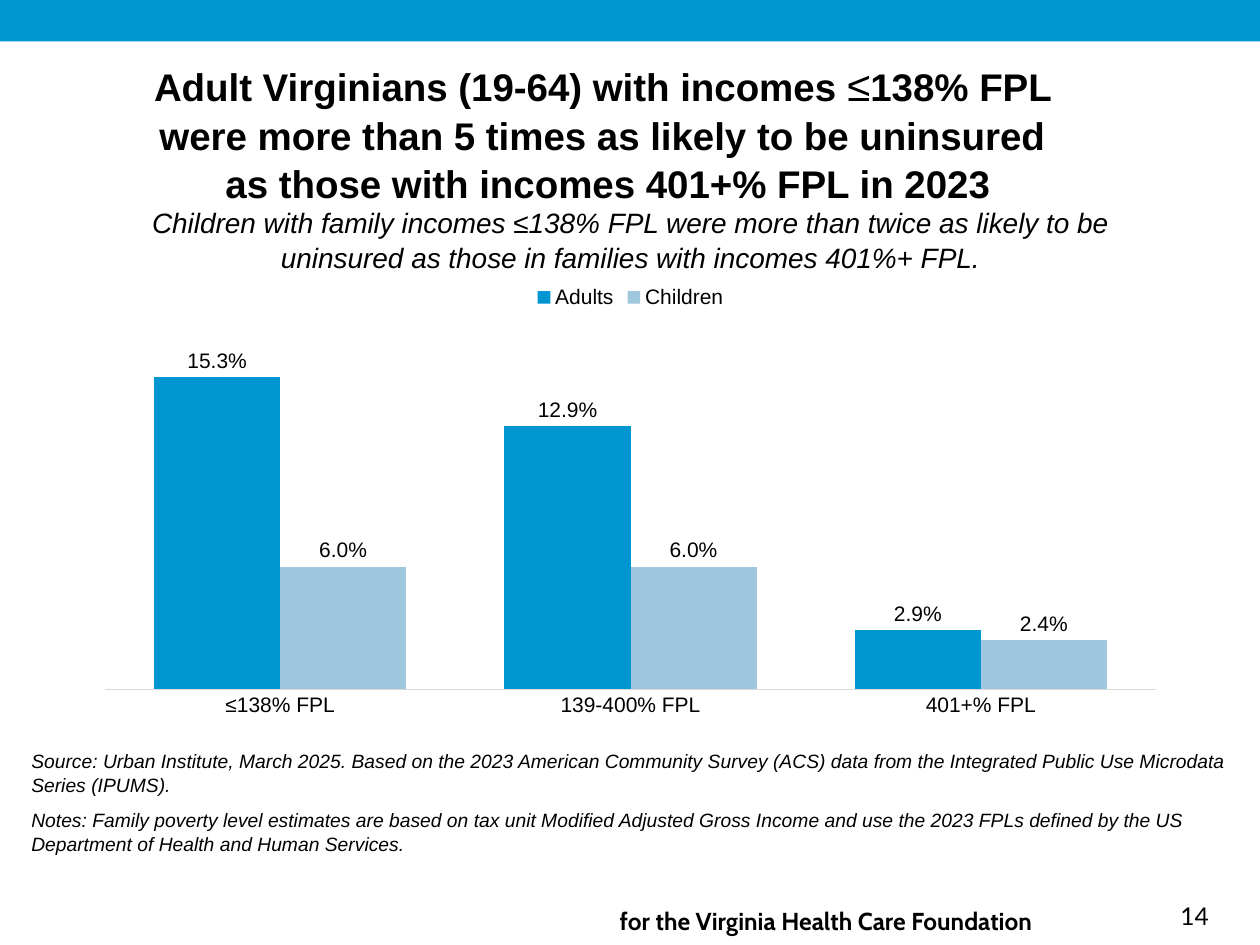
from dataclasses import dataclass

from lxml.etree import SubElement
from pptx import Presentation
from pptx.chart.data import CategoryChartData
from pptx.dml.color import RGBColor
from pptx.enum.chart import XL_CHART_TYPE, XL_LABEL_POSITION, XL_LEGEND_POSITION, XL_TICK_MARK
from pptx.enum.shapes import MSO_SHAPE
from pptx.enum.text import PP_ALIGN
from pptx.oxml.ns import qn
from pptx.util import Inches, Pt


@dataclass(frozen=True)
class Theme:
    black: RGBColor = RGBColor.from_string("000000")
    adults: RGBColor = RGBColor.from_string("0096D2")
    children: RGBColor = RGBColor.from_string("9FC7DE")
    axis: RGBColor = RGBColor.from_string("D9D9D9")
    body: str = "Arial"
    footer: str = "Cabin"
    number: str = "Lato"
    title_size: Pt = Pt(22)
    symbol_size: Pt = Pt(24)
    subtitle_size: Pt = Pt(16)
    footer_size: Pt = Pt(14)
    chart_size: Pt = Pt(12)
    note_size: Pt = Pt(11)


class SlideBuilder:
    """Holds the theme and the current slide, and adds each kind of element."""

    def __init__(self, slide, theme):
        self.slide = slide
        self.theme = theme

    def style_font(self, font, **formats):
        values = {"name": self.theme.body, **formats}
        for name, value in values.items():
            setattr(font, name, value)
        font.color.rgb = self.theme.black

    def add_band(self, left, top, width, height):
        shape = self.slide.shapes.add_shape(
            MSO_SHAPE.RECTANGLE, Inches(left), Inches(top), Inches(width), Inches(height)
        )
        shape.shadow.inherit = False
        shape.fill.solid()
        shape.fill.fore_color.rgb = self.theme.adults
        shape.line.fill.background()

    def add_text(self, box, paragraphs, font, **paragraph_formats):
        frame = self.slide.shapes.add_textbox(*map(Inches, box)).text_frame
        frame.word_wrap = True
        for index, runs in enumerate(paragraphs):
            paragraph = frame.paragraphs[0] if index == 0 else frame.add_paragraph()
            for name, value in paragraph_formats.items():
                setattr(paragraph, name, value)
            for position, (text, changes) in enumerate(runs):
                for line_index, line in enumerate(text.split("\n")):
                    if line_index:
                        paragraph.add_line_break()
                    run = paragraph.add_run()
                    run.text = line
                    self.style_font(run.font, **{**font, **changes})

    def add_column_chart(self, box, categories, series_data, plot_area):
        data = CategoryChartData(number_format="0.0%")
        data.categories = categories
        for name, values, color in series_data:
            data.add_series(name, values)
        chart = self.slide.shapes.add_chart(
            XL_CHART_TYPE.COLUMN_CLUSTERED, *map(Inches, box), data
        ).chart
        size = self.theme.chart_size
        self.style_font(chart.font, size=size)
        chart.has_title = False
        chart.has_legend = True
        chart.legend.position = XL_LEGEND_POSITION.TOP
        chart.legend.include_in_layout = False
        self.style_font(chart.legend.font, size=size)

        axis = chart.category_axis
        axis.major_tick_mark = XL_TICK_MARK.NONE
        axis.format.line.color.rgb = self.theme.axis
        axis.format.line.width = Pt(0.75)
        self.style_font(axis.tick_labels.font, size=size)
        value_formats = {
            "visible": False,
            "has_major_gridlines": False,
            "minimum_scale": 0,
            "maximum_scale": 0.18,
        }
        for name, value in value_formats.items():
            setattr(chart.value_axis, name, value)

        plot = chart.plots[0]
        plot.gap_width = 78
        plot.overlap = 0
        plot.vary_by_categories = False
        label_formats = {
            "show_value": True,
            "number_format": "0.0%",
            "number_format_is_linked": False,
            "position": XL_LABEL_POSITION.OUTSIDE_END,
        }
        for series, (_, _, color) in zip(plot.series, series_data):
            series.format.fill.solid()
            series.format.fill.fore_color.rgb = color
            for name, value in label_formats.items():
                setattr(series.data_labels, name, value)
            self.style_font(series.data_labels.font, size=size)
        self.place_plot(chart, plot_area)

    def place_plot(self, chart, plot_area):
        area = chart.element.find(".//" + qn("c:plotArea"))
        layout = area.find(qn("c:layout"))
        if layout is None:
            layout = SubElement(area, qn("c:layout"))
            area.insert(0, layout)
        manual = SubElement(layout, qn("c:manualLayout"))
        settings = {"layoutTarget": "inner", "xMode": "edge", "yMode": "edge", **plot_area}
        for name, value in settings.items():
            SubElement(manual, qn(f"c:{name}")).set("val", str(value))


def main():
    presentation = Presentation()
    presentation.slide_width = Inches(10)
    presentation.slide_height = Inches(7.5)
    theme = Theme()
    builder = SlideBuilder(presentation.slides.add_slide(presentation.slide_layouts[6]), theme)
    centered = {"alignment": PP_ALIGN.CENTER, "line_spacing": 1.05}

    builder.add_band(0, 0, 10, 0.33)
    builder.add_text(
        (9.27, 7.1, 0.73, 0.34), [[("14", {})]], {"name": theme.number, "size": theme.footer_size}
    )
    title = [
        ("Adult Virginians (19-64) with incomes ", {}),
        ("≤", {"size": theme.symbol_size, "bold": False}),
        (
            "138% FPL \nwere more than 5 times as likely to be uninsured \n"
            "as those with incomes 401+% FPL in 2023",
            {},
        ),
    ]
    builder.add_text(
        (0.15, 0.4, 9.35, 1.25), [title], {"size": theme.title_size, "bold": True}, **centered
    )
    notes = [
        "Source: Urban Institute, March 2025. Based on the 2023 American Community Survey (ACS) "
        "data from the Integrated Public Use Microdata Series (IPUMS).",
        "Notes: Family poverty level estimates are based on tax unit Modified Adjusted Gross "
        "Income and use the 2023 FPLs defined by the US Department of Health and Human Services.",
    ]
    builder.add_text(
        (0.15, 5.89, 10, 0.93),
        [[(note, {})] for note in notes],
        {"size": theme.note_size, "italic": True},
        line_spacing=1.05,
        space_after=Pt(6),
    )
    builder.add_text(
        (4.82, 7.14, 4.85, 0.26),
        [[("for the Virginia Health Care Foundation", {})]],
        {"name": theme.footer, "size": theme.footer_size, "bold": True},
    )
    builder.add_column_chart(
        (0.66, 2.16, 8.69, 3.6),
        ["≤138% FPL", "139-400% FPL", "401+% FPL"],
        [
            ("Adults", (0.153, 0.129, 0.029), theme.adults),
            ("Children", (0.06, 0.06, 0.024), theme.children),
        ],
        {"x": 0.02, "y": 0.11, "w": 0.96, "h": 0.81},
    )
    subtitle = (
        "Children with family incomes ≤138% FPL were more than twice as likely to be "
        "uninsured as those in families with incomes 401%+ FPL."
    )
    builder.add_text(
        (1.05, 1.57, 7.91, 0.64),
        [[(subtitle, {})]],
        {"size": theme.subtitle_size, "italic": True},
        **centered,
    )
    presentation.save("out.pptx")


if __name__ == "__main__":
    main()
